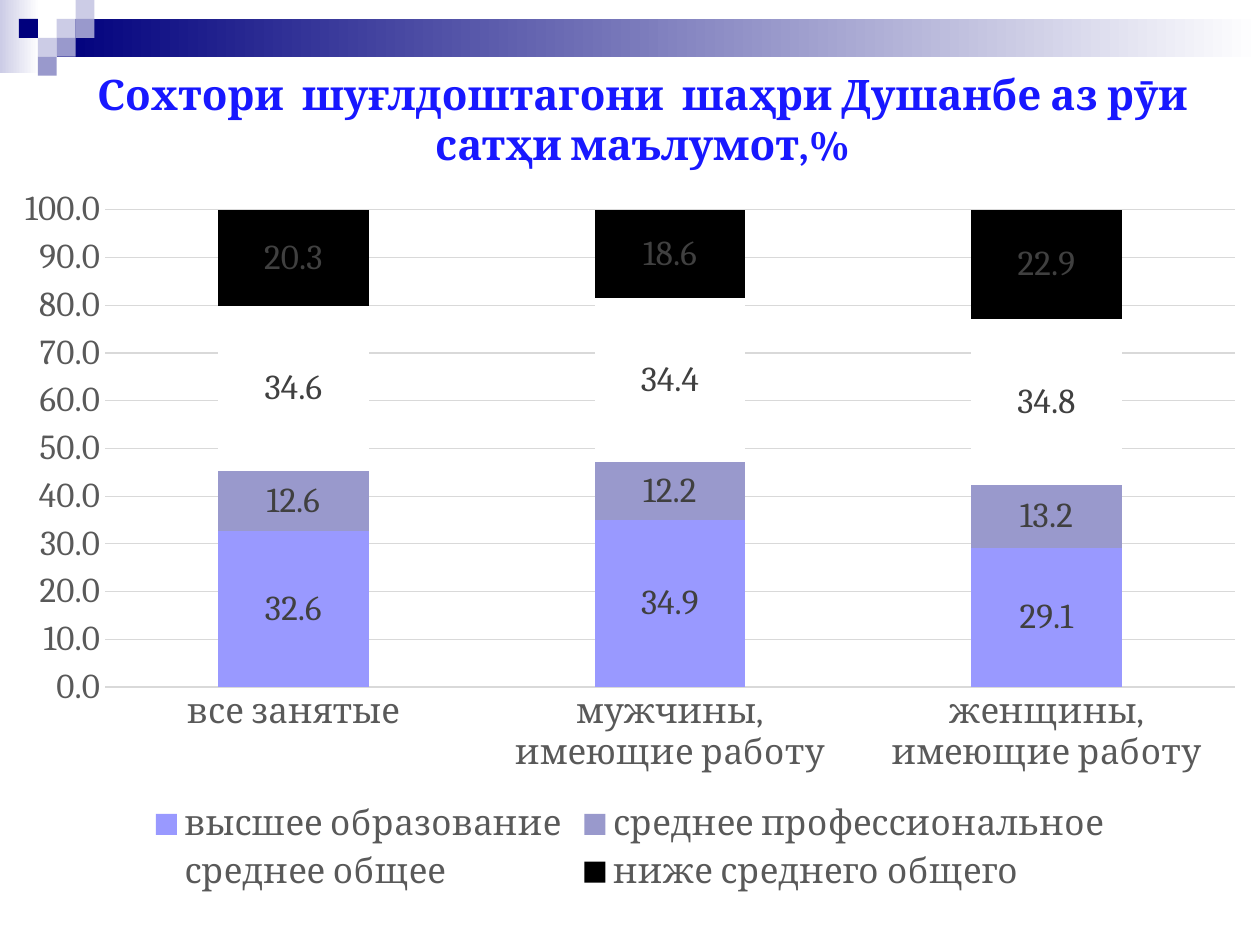
import pptx
import pptx.chart.data
import pptx.dml.color
import pptx.enum.chart
import pptx.enum.shapes
import pptx.enum.text
import pptx.util

Pt = pptx.util.Pt
FONT = "Cambria"
TITLE = "Сохтори  шуғлдоштагони  шаҳри Душанбе аз рӯи сатҳи маълумот,%"
CATEGORIES = ["все занятые", "мужчины, имеющие работу", "женщины, имеющие работу"]
SERIES = [
    ("высшее образование", "9999FF", (32.6, 34.9, 29.1)),
    ("среднее профессиональное", "9999CC", (12.6, 12.2, 13.2)),
    ("среднее общее", "FFFFFF", (34.6, 34.4, 34.8)),
    ("ниже среднего общего", "000000", (20.3, 18.6, 22.9)),
]
NAVY, LILAC, PALE, WHITE = "00007D", "9999CC", "CCCCE6", "FFFFFF"
GRID, AXIS_TEXT, LABEL_TEXT = "D9D9D9", "595959", "404040"

# left, top, width, height, start colour
BANDS = [(0, 0, 22.5, 42, PALE), (32.4, 10.8, 687.6, 21.6, NAVY)]
# column, row, colour on the grid of small squares
SQUARE = 10.8
GRID_LEFT = 21.6
SQUARES = [
    (1, 1, PALE), (2, 0, PALE), (2, 1, LILAC), (0, 2, PALE),
    (-1, 1, NAVY), (1, 2, LILAC), (0, 3, LILAC),
]


def rgb(value):
    return pptx.dml.color.RGBColor.from_string(value)


def set_attrs(obj, **values):
    for name, value in values.items():
        setattr(obj, name, value)


def style_font(font, size, color, bold=False):
    set_attrs(font, name=FONT, size=Pt(size), bold=bold)
    font.color.rgb = rgb(color)


def style_line(line, color):
    line.color.rgb = rgb(color)
    line.width = Pt(0.75)


def add_rect(slide, left, top, width, height, color, fade_to=None):
    sp = slide.shapes.add_shape(
        pptx.enum.shapes.MSO_SHAPE.RECTANGLE, *map(Pt, (left, top, width, height)))
    sp.shadow.inherit = False
    sp.line.fill.background()
    if fade_to is None:
        sp.fill.solid()
        sp.fill.fore_color.rgb = rgb(color)
        return
    sp.fill.gradient()
    sp.fill.gradient_angle = 0
    for stop, value, position in zip(sp.fill.gradient_stops, (color, fade_to), (0, 1)):
        stop.color.rgb = rgb(value)
        stop.position = position


def add_title(slide):
    tf = slide.shapes.add_textbox(Pt(14.4), Pt(36), Pt(705.6), Pt(64)).text_frame
    set_attrs(tf, word_wrap=True, vertical_anchor=pptx.enum.text.MSO_ANCHOR.MIDDLE)
    p = tf.paragraphs[0]
    p.alignment = pptx.enum.text.PP_ALIGN.CENTER
    r = p.add_run()
    r.text = TITLE
    style_font(r.font, 24, "1818FF", bold=True)


def add_education_chart(slide):
    xl = pptx.enum.chart
    data = pptx.chart.data.CategoryChartData(number_format="0.0")
    data.categories = CATEGORIES
    for name, _, values in SERIES:
        data.add_series(name, values)
    chart = slide.shapes.add_chart(
        xl.XL_CHART_TYPE.COLUMN_STACKED, Pt(0), Pt(100), Pt(720), Pt(414), data).chart
    set_attrs(chart, has_title=False, has_legend=True)
    style_font(chart.font, 20, "000000")
    set_attrs(chart.legend, position=xl.XL_LEGEND_POSITION.BOTTOM, include_in_layout=False)
    style_font(chart.legend.font, 20, AXIS_TEXT)

    for axis in (chart.category_axis, chart.value_axis):
        set_attrs(axis, major_tick_mark=xl.XL_TICK_MARK.NONE,
                  minor_tick_mark=xl.XL_TICK_MARK.NONE)
        style_font(axis.tick_labels.font, 20, AXIS_TEXT)
    style_line(chart.category_axis.format.line, GRID)
    axis = chart.value_axis
    set_attrs(axis, minimum_scale=0, maximum_scale=100, major_unit=10,
              has_major_gridlines=True)
    set_attrs(axis.tick_labels, number_format="0.0", number_format_is_linked=False)
    axis.format.line.fill.background()
    style_line(axis.major_gridlines.format.line, GRID)

    plot = chart.plots[0]
    set_attrs(plot, gap_width=150, overlap=100, vary_by_categories=False)
    for series, (_, color, _) in zip(plot.series, SERIES):
        series.format.fill.solid()
        series.format.fill.fore_color.rgb = rgb(color)
        series.invert_if_negative = False
        labels = series.data_labels
        set_attrs(labels, show_value=True, number_format="0.0",
                  number_format_is_linked=False)
        style_font(labels.font, 20, LABEL_TEXT)


def main():
    prs = pptx.Presentation()
    set_attrs(prs, slide_width=Pt(720), slide_height=Pt(540))
    slide = prs.slides.add_slide(prs.slide_layouts[6])
    for *box, color in BANDS:
        add_rect(slide, *box, color, fade_to=WHITE)
    for col, row, color in SQUARES:
        add_rect(slide, GRID_LEFT + col * SQUARE, row * SQUARE, SQUARE, SQUARE, color)
    add_title(slide)
    add_education_chart(slide)
    prs.save("out.pptx")


if __name__ == "__main__":
    main()
